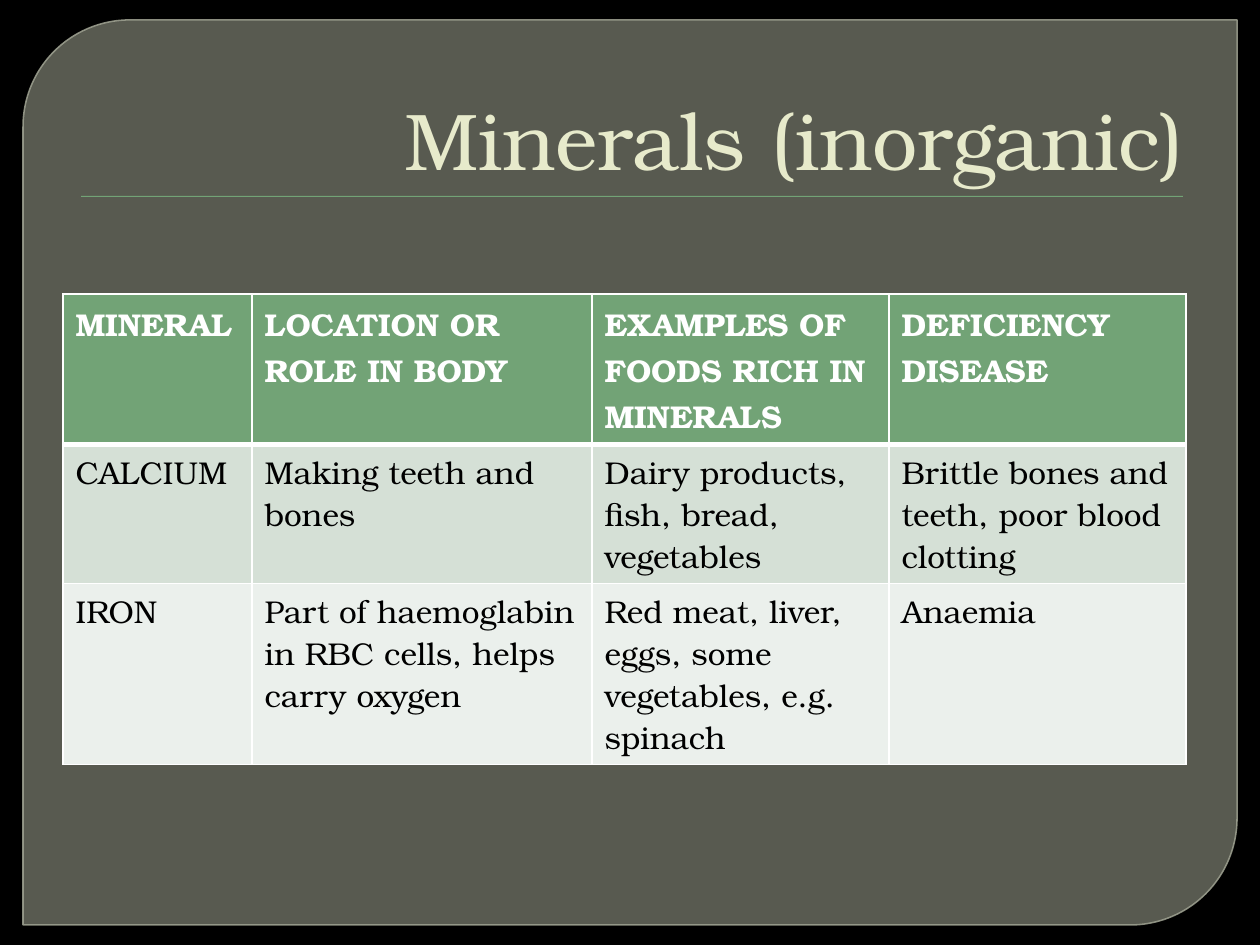
from lxml.etree import SubElement as Sub
from pptx import Presentation
from pptx.dml.color import RGBColor
from pptx.enum.shapes import MSO_SHAPE as Shape
from pptx.enum.text import MSO_ANCHOR as Anchor, MSO_AUTO_SIZE as Fit, PP_ALIGN as Align
from pptx.oxml.ns import qn
from pptx.util import Pt

SCALE = 914400 / 126
FONT = "TeX Gyre Bonum"
GREEN, WHITE, BLACK = "72A376", "FFFFFF", "000000"
COLS = [189, 340, 297, 297]
HEIGHTS = [150, 139, 181]
FILLS = [GREEN, "D5E0D6", "EBF0EC"]
ROWS = [
    ["MINERAL", "LOCATION OR ROLE IN BODY",
     "EXAMPLES OF FOODS RICH IN MINERALS", "DEFICIENCY DISEASE"],
    ["CALCIUM", "Making teeth and bones",
     "Dairy products, fish, bread, vegetables",
     "Brittle bones and teeth, poor blood clotting"],
    ["IRON", "Part of haemoglabin in RBC cells, helps carry oxygen",
     "Red meat, liver, eggs, some vegetables, e.g. spinach", "Anaemia"],
]


def px(n):
    return round(n * SCALE)


def rgb(code):
    return RGBColor.from_string(code)


def paint(fill, code, alpha=100):
    fill.solid()
    fill.fore_color.rgb = rgb(code)
    if alpha < 100:
        # The last colour node is the one just set
        node = list(fill._xPr.iter(qn("a:srgbClr")))[0]
        Sub(node, qn("a:alpha"), val=str(alpha * 1000))


def style(para, size, code, bold=False):
    font = para.font
    font.name, font.size, font.bold = FONT, Pt(size), bold
    font.color.rgb = rgb(code)


def add_frame(slide, x, y, w, h):
    """Draw the rounded panel and the thin rule under the title."""
    panel = slide.shapes.add_shape(
        Shape.ROUND_2_DIAG_RECTANGLE, px(x), px(y), px(w), px(h))
    panel.adjustments[0], panel.adjustments[1] = 0.118, 0
    panel.shadow.inherit = False
    paint(panel.fill, "888B7B", 65)
    paint(panel.line.fill, "9DA090", 88)
    panel.line.width = Pt(0.87)

    rule = slide.shapes.add_shape(
        Shape.RECTANGLE, px(x + 58), px(y + 176), px(w - 112), px(1))
    rule.shadow.inherit = False
    paint(rule.fill, GREEN)
    rule.line.fill.background()


def set_title(slide, text, x, y, w, h):
    title = slide.shapes.title
    title.left, title.top, title.width, title.height = map(px, (x, y, w, h))
    frame = title.text_frame
    frame.text = text
    frame.auto_size, frame.vertical_anchor = Fit.NONE, Anchor.BOTTOM
    para = frame.paragraphs[0]
    para.alignment = Align.RIGHT
    style(para, 46, "E7EACB")
    slide.shapes._spTree.append(title._element)  # above the panel


def add_edges(cell, widths):
    props = cell._tc.get_or_add_tcPr()
    for i, (side, width) in enumerate(zip("LRTB", widths)):
        edge = props.makeelement(qn(f"a:ln{side}"), {"w": str(Pt(width))})
        fill = Sub(edge, qn("a:solidFill"))
        Sub(fill, qn("a:srgbClr"), val=WHITE)
        props.insert(i, edge)


def add_grid(slide, x, y):
    table = slide.shapes.add_table(
        len(ROWS), len(COLS), px(x), px(y),
        px(sum(COLS)), px(sum(HEIGHTS))).table
    for col, width in zip(table.columns, COLS):
        col.width = px(width)
    for r, texts in enumerate(ROWS):
        table.rows[r].height = px(HEIGHTS[r])
        head = r == 0
        for c, text in enumerate(texts):
            cell = table.cell(r, c)
            cell.text = text
            paint(cell.fill, FILLS[r])
            style(cell.text_frame.paragraphs[0], 18,
                  WHITE if head else BLACK, head)
            add_edges(cell, (1, 1, 3 if r == 1 else 1, 3 if head else 1))


def main():
    deck = Presentation()
    deck.slide_width, deck.slide_height = px(1260), px(945)
    slide = deck.slides.add_slide(deck.slide_layouts[5])
    paint(slide.background.fill, BLACK)
    add_frame(slide, 23, 20, 1214, 905)
    set_title(slide, "Minerals (inorganic)", 63, 35, 1134, 158)
    add_grid(slide, 63, 294)
    deck.save("out.pptx")


if __name__ == "__main__":
    main()
